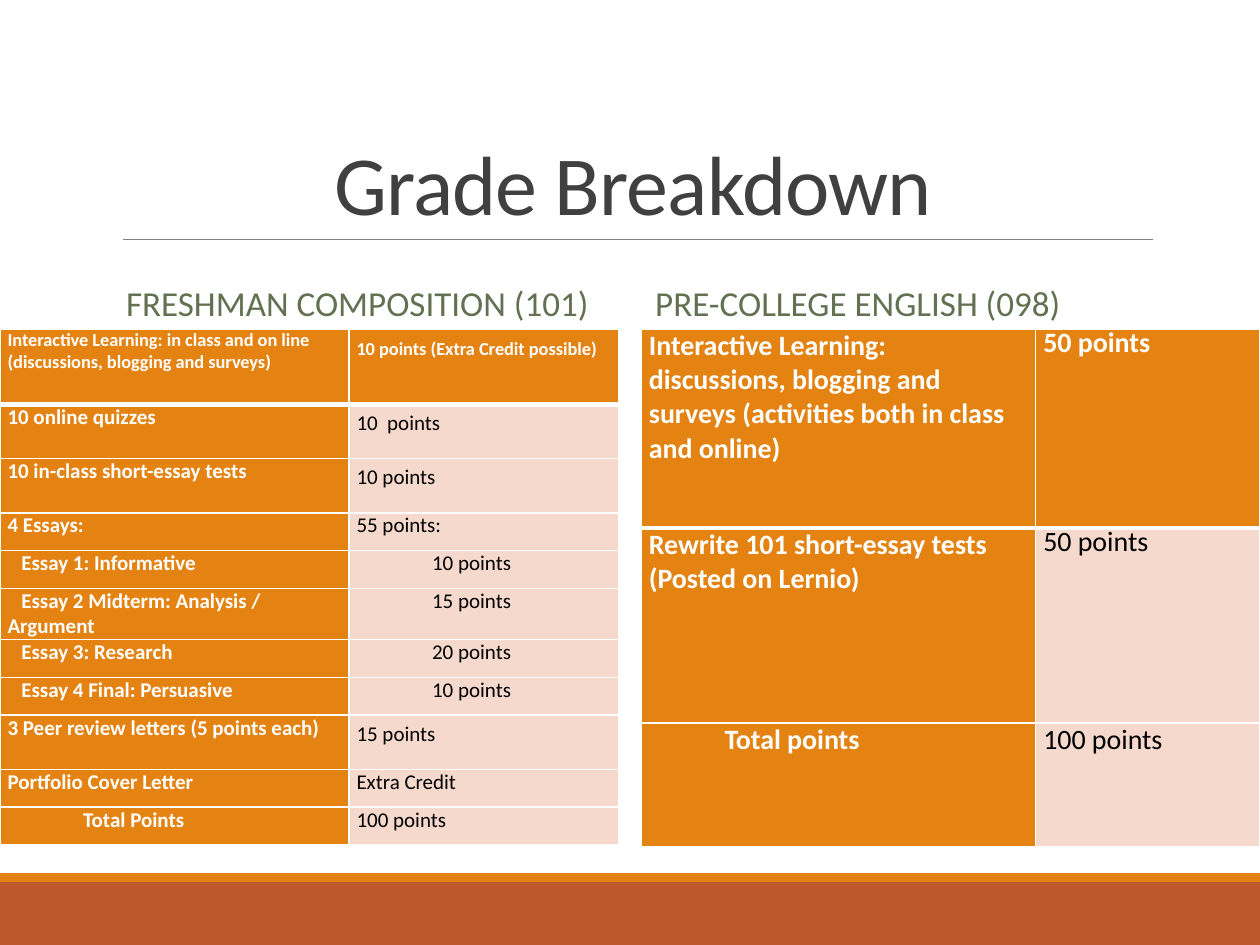
from lxml import etree
from pptx import Presentation, util as u
from pptx.dml.color import RGBColor
from pptx.enum import shapes, text
from pptx.oxml.ns import qn

COLORS = {"rust": "BD582C", "orange": "E48312", "blush": "F5D9CC", "rule": "808080",
          "title": "404040", "heading": "637052", "white": "FFFFFF", "black": "000000"}
COLUMNS, ROWS = 100, 75  # slide grid
COMPARISON = 4  # layout with a title and two headed columns

# Paragraph formats used in the table cells
PLAIN = {}
TALL = {"spacing": 18}
DEEP = {"margin": 0.6}
FIRST = {"indent": 0.11}

# Each row: height, label, label format, points, points format
FRESHMAN = [
    (6, "Interactive Learning: in class and on line (discussions, blogging and surveys)", PLAIN,
     "10 points (Extra Credit possible)", TALL),
    (4.3, "10 online quizzes", PLAIN, "10  points", TALL),
    (4.3, "10 in-class short-essay tests", PLAIN, "10 points", TALL),
    (3, "4 Essays:", PLAIN, "55 points:", PLAIN),
    (3, "Essay 1: Informative", FIRST, "10 points", DEEP),
    (3, "Essay 2 Midterm: Analysis / Argument", FIRST, "15 points", DEEP),
    (3, "Essay 3: Research", FIRST, "20 points", DEEP),
    (3, "Essay 4 Final: Persuasive", FIRST, "10 points", DEEP),
    (4.3, "3 Peer review letters (5 points each)", PLAIN, "15 points", TALL),
    (3, "Portfolio Cover Letter", PLAIN, "Extra Credit", PLAIN),
    (3, "Total Points", DEEP, "100 points", PLAIN),
]
PRE_COLLEGE = [
    (15.8, "Interactive Learning: discussions, blogging and surveys "
     "(activities both in class and online)", PLAIN, "50 points", TALL),
    (15.5, "Rewrite 101 short-essay tests\n(Posted on Lernio)", PLAIN, "50 points", TALL),
    (9.8, "Total points", DEEP, "100 points", PLAIN),
]


def rgb(name):
    return RGBColor.from_string(COLORS[name])


class SlideBuilder:
    font = "Calibri"

    def __init__(self, deck):
        self.deck = deck
        self.page = deck.slides.add_slide(deck.slide_layouts[COMPARISON])

    def x(self, columns):
        return round(self.deck.slide_width * columns / COLUMNS)

    def y(self, rows):
        return round(self.deck.slide_height * rows / ROWS)

    def area(self, left, top, width, height):
        return self.x(left), self.y(top), self.x(width), self.y(height)

    def style(self, para, size, color, bold=False):
        for span in para.runs:
            span.font.name = self.font
            span.font.size = u.Pt(size)
            span.font.bold = bold
            span.font.color.rgb = rgb(color)

    def bar(self, area, color):
        box = self.page.shapes.add_shape(shapes.MSO_SHAPE.RECTANGLE, *self.area(*area))
        box.shadow.inherit = False
        box.fill.solid()
        box.fill.fore_color.rgb = rgb(color)
        box.line.fill.background()

    def rule(self, left, right, top):
        line = self.page.shapes.add_connector(
            shapes.MSO_CONNECTOR.STRAIGHT, self.x(left), self.y(top), self.x(right), self.y(top))
        line.line.color.rgb = rgb("rule")
        line.line.width = u.Pt(0.5)
        etree.SubElement(line._element.spPr, qn("a:effectLst"))

    def placeholder(self, index, words, area, size, color, anchor):
        box = self.page.placeholders[index]
        box.left, box.top, box.width, box.height = self.area(*area)
        frame = box.text_frame
        frame.text = words
        frame.auto_size = text.MSO_AUTO_SIZE.NONE
        frame.vertical_anchor = anchor
        para = frame.paragraphs[0]
        self.style(para, size, color)
        return para

    def title(self, words, area):
        para = self.placeholder(0, words, area, 48, "title", text.MSO_ANCHOR.BOTTOM)
        para.alignment = text.PP_ALIGN.CENTER
        para.line_spacing = 0.85
        para.runs[0].font._element.set("spc", "-50")

    def heading(self, index, words, area):
        para = self.placeholder(index, words, area, 20, "heading", text.MSO_ANCHOR.MIDDLE)
        para.line_spacing = 0.9
        para.space_before, para.space_after = u.Pt(12), u.Pt(2)

    def borders(self, cell, top, bottom):
        properties = cell._tc.get_or_add_tcPr()
        for side, width in (("L", 1), ("R", 1), ("T", top), ("B", bottom)):
            line = etree.SubElement(properties, qn(f"a:ln{side}"), w=str(u.Pt(width)))
            fill = etree.SubElement(line, qn("a:solidFill"))
            etree.SubElement(fill, qn("a:srgbClr"), val=COLORS["white"])

    def cell(self, cell, words, layout, fill, size, color, bold):
        cell.margin_left = cell.margin_right = u.Inches(0.06)
        cell.margin_top = cell.margin_bottom = 0
        cell.fill.solid()
        cell.fill.fore_color.rgb = rgb(fill)
        cell.text_frame.text = words
        for para in cell.text_frame.paragraphs:
            self.style(para, size, color, bold)
            if "spacing" in layout:
                para.line_spacing = u.Pt(layout["spacing"])
            for key, name in (("margin", "marL"), ("indent", "indent")):
                if key in layout:
                    para._p.get_or_add_pPr().set(name, str(u.Inches(layout[key])))

    def table(self, left, top, widths, records, size, header_size):
        height = sum(record[0] for record in records)
        table = self.page.shapes.add_table(
            len(records), len(widths), *self.area(left, top, sum(widths), height)).table
        for column, width in zip(table.columns, widths):
            column.width = self.x(width)
        for row, (height, label, label_format, points, points_format) in enumerate(records):
            table.rows[row].height = self.y(height)
            header = row == 0
            for column, (words, layout) in enumerate(
                    ((label, label_format), (points, points_format))):
                strong = header or column == 0
                cell = table.cell(row, column)
                self.borders(cell, 3 if row == 1 else 1, 3 if header else 1)
                self.cell(cell, words, layout, "orange" if strong else "blush",
                          header_size if header else size,
                          "white" if strong else "black", strong)

    def remove_empty_placeholders(self):
        for box in list(self.page.placeholders):
            if not box.text_frame.text:
                box._element.getparent().remove(box._element)


def main():
    deck = Presentation()
    deck.slide_width, deck.slide_height = u.Inches(10), u.Inches(7.5)
    builder = SlideBuilder(deck)

    # Footer bands and title rule
    builder.bar((0, 70, 100, 5), "rust")
    builder.bar((0, 69.3, 100, 0.7), "orange")
    builder.rule(9.8, 91.5, 19)

    # Title and column headings
    builder.title("Grade Breakdown", (1.3, 10.7, 97.9, 8.3))
    builder.heading(1, "FRESHMAN COMPOSITION (101)", (9, 20.2, 40.5, 8.1))
    builder.heading(3, "PRE-COLLEGE ENGLISH (098)", (51, 20.2, 40.5, 8.1))
    builder.remove_empty_placeholders()

    # Grade tables
    builder.table(0, 26.1, (27.7, 21.4), FRESHMAN, 12, 10.5)
    builder.table(50.9, 26.1, (31.3, 17.8), PRE_COLLEGE, 16, 16)

    deck.save("out.pptx")


if __name__ == "__main__":
    main()
